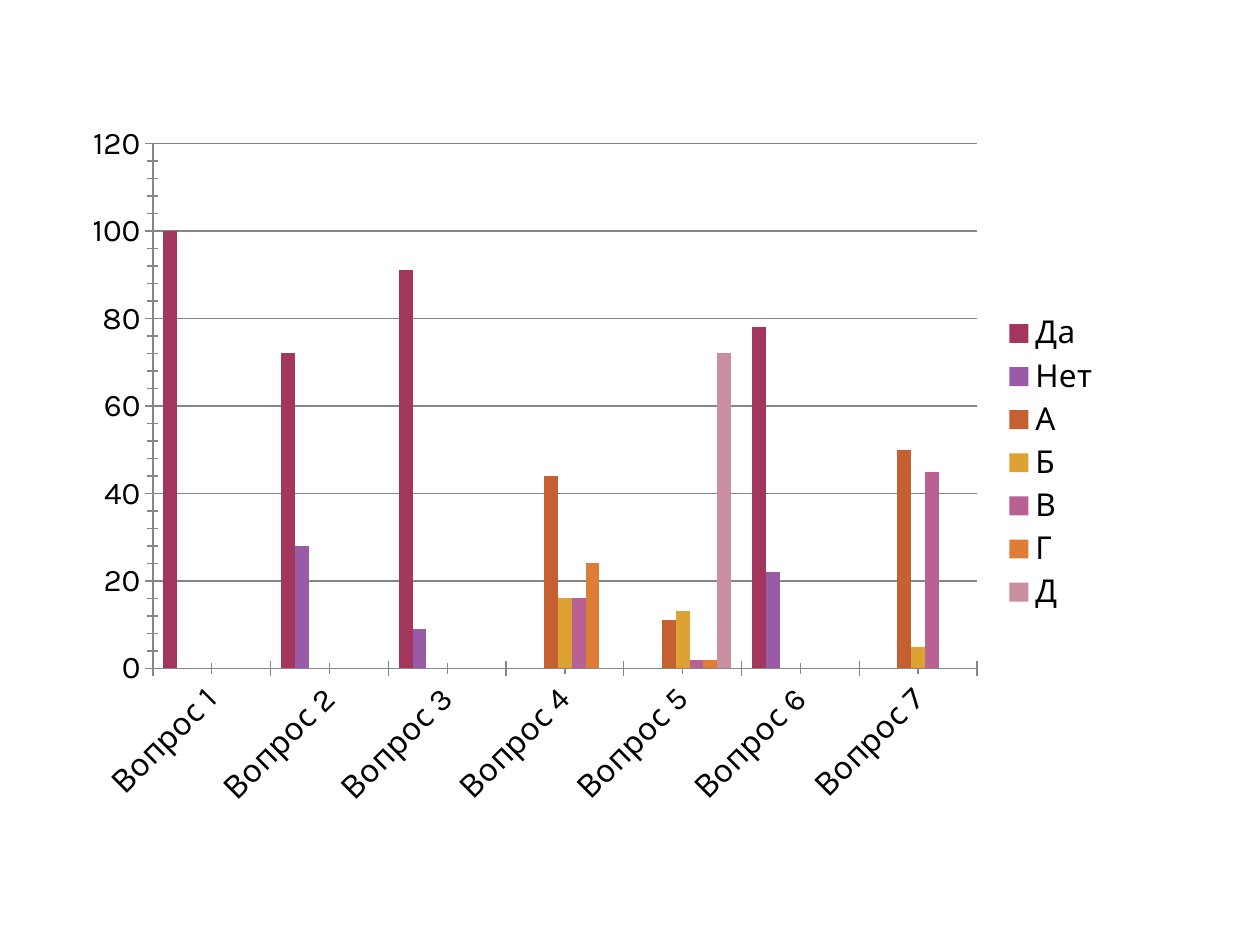
import pptx
import pptx.chart.data
import pptx.dml.color
import pptx.enum.chart
import pptx.oxml
import pptx.oxml.ns
import pptx.util

Cm, Pt = pptx.util.Cm, pptx.util.Pt
enum = pptx.enum.chart
qn = pptx.oxml.ns.qn

INK = {"text": "000000", "line": "868686"}
HUES = {"Да": "A3365C", "Нет": "995BA6", "А": "C56030", "Б": "DDA233",
        "В": "B86192", "Г": "DE7D36", "Д": "C98F9E"}
VOTES = {
    "Да": (100, 72, 91, None, None, 78, None),
    "Нет": (0, 28, 9, None, None, 22, None),
    "А": (None, None, None, 44, 11, None, 50),
    "Б": (None, None, None, 16, 13, None, 5),
    "В": (None, None, None, 16, 2, None, 45),
    "Г": (None, None, None, 24, 2, None, None),
    "Д": (None, None, None, 0, 72, None, None),
}


def tint(hue):
    return pptx.dml.color.RGBColor.from_string(hue)


def style(font, size=18, face="Karla", hue=INK["text"]):
    font.size, font.name, font.bold = Pt(size), face, False
    font.color.rgb = tint(hue)


def rule(form):
    form.line.color.rgb = tint(INK["line"])
    form.line.width = Pt(0.75)


def fix_plot(chart, **box):
    """Pin the inner plot area; box gives x, y, w, h as shares of the chart."""
    area = chart._chartSpace.find(".//" + qn("c:plotArea"))
    old = area.find(qn("c:layout"))
    if old is not None:
        area.remove(old)
    parts = "".join(f'<c:{key} val="{val}"/>' for key, val in box.items())
    area.insert(0, pptx.oxml.parse_xml(
        f'<c:layout {pptx.oxml.ns.nsdecls("c")}><c:manualLayout>'
        '<c:layoutTarget val="inner"/><c:xMode val="edge"/>'
        f'<c:yMode val="edge"/>{parts}</c:manualLayout></c:layout>'))


def set_axes(chart):
    cat, val = chart.category_axis, chart.value_axis
    for axis in (cat, val):
        axis.minor_tick_mark = enum.XL_TICK_MARK.CROSS
        rule(axis.format)
        style(axis.tick_labels.font)
    cat.major_tick_mark = enum.XL_TICK_MARK.CROSS
    val.major_tick_mark = enum.XL_TICK_MARK.OUTSIDE
    body = cat._element.find(".//" + qn("a:bodyPr"))
    body.set("rot", str(-45 * 60000))
    val.minimum_scale, val.maximum_scale = 0, 120
    val.major_unit, val.minor_unit = 20, 4
    val.has_major_gridlines = True
    rule(val.major_gridlines.format)


def add_votes(slide, left, top, width, height):
    data = pptx.chart.data.CategoryChartData()
    data.categories = [f"Вопрос {n}" for n in range(1, 8)]
    for name, votes in VOTES.items():
        data.add_series(name, votes)
    chart = slide.shapes.add_chart(
        enum.XL_CHART_TYPE.COLUMN_CLUSTERED, left, top, width, height, data).chart
    style(chart.font)
    chart.has_title = False
    chart.has_legend = True
    chart.legend.position = enum.XL_LEGEND_POSITION.RIGHT
    chart.legend.include_in_layout = True
    style(chart.legend.font)
    plot = chart.plots[0]
    plot.gap_width, plot.overlap = 150, 0
    plot.vary_by_categories = False
    for row in plot.series:
        row.invert_if_negative = False
        row.format.fill.solid()
        row.format.fill.fore_color.rgb = tint(HUES[row.name])
    set_axes(chart)
    fix_plot(chart, x=0.08, y=0.05, w=0.79, h=0.74)


def main():
    deck = pptx.Presentation()
    deck.slide_width, deck.slide_height = Cm(25.4), Cm(19.05)
    slide = deck.slides.add_slide(deck.slide_layouts[6])
    add_votes(slide, Cm(1.4), Cm(2.18), Cm(21.03), Cm(14.3))
    deck.save("out.pptx")


if __name__ == "__main__":
    main()
